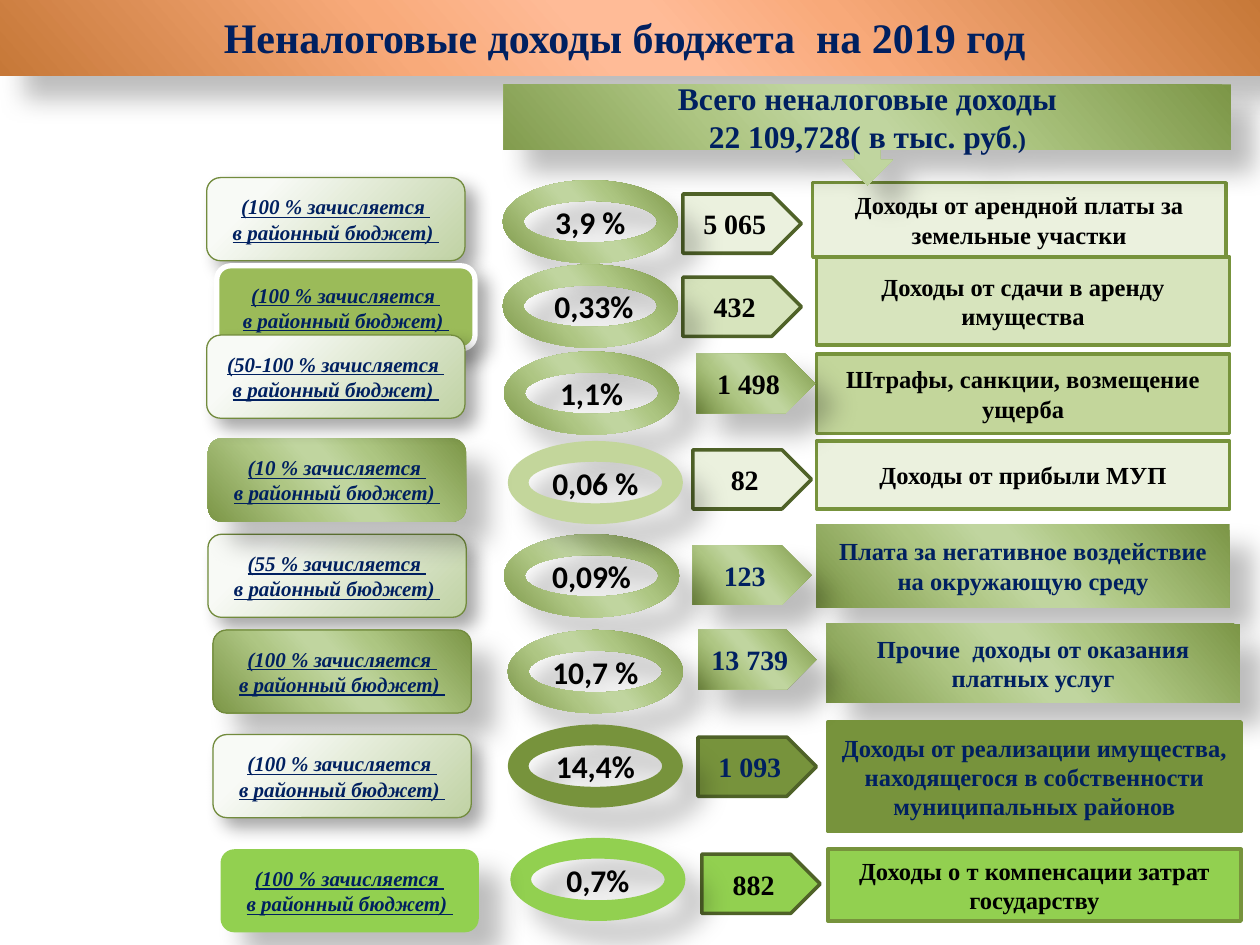
from lxml import etree
from pptx import Presentation
from pptx.dml.color import RGBColor
from pptx.enum.shapes import MSO_SHAPE
from pptx.enum.text import MSO_ANCHOR, PP_ALIGN
from pptx.oxml.ns import qn
from pptx.util import Inches, Pt

RECT, ROUNDED = MSO_SHAPE.RECTANGLE, MSO_SHAPE.ROUNDED_RECTANGLE
PLATE, DONUT = MSO_SHAPE.PENTAGON, MSO_SHAPE.DONUT
CALLOUT = MSO_SHAPE.DOWN_ARROW_CALLOUT
MIDDLE, CENTER = MSO_ANCHOR.MIDDLE, PP_ALIGN.CENTER

SERIF, SANS = "Times New Roman", "Calibri"
NAVY, BLACK = "002060", "000000"
PALE, LIGHT, SOFT, OLIVE, LIME = "EBF1DE", "D7E4BD", "C3D69B", "77933C", "92D050"
PLATE_EDGE, BADGE_EDGE = "4F6228", "728B3D"

# Gradients are lists of (position in percent, colour)
ORANGE = [(0, "C67838"), (33, "F8A979"), (47, "FFBB97"),
          (53, "FFBB97"), (68, "F8AA7A"), (100, "C67838")]
GREEN = [(0, "7C9647"), (33, "ADC682"), (47, "C0D59F"),
         (53, "C0D59F"), (68, "AEC683"), (100, "7C9647")]
MIST = [(20, "F8FAF6"), (100, "C0D2A4")]

# Shadows are (opacity in percent, blur, distance)
DEEP, NEAR = (26, 15, 18), (35, 10.2, 8)


def paint(sp, fill, line=None, width=2, shadow=None):
    if isinstance(fill, str):
        sp.fill.solid()
        sp.fill.fore_color.rgb = RGBColor.from_string(fill)
    else:
        sp.fill.gradient()
        grad = sp._element.spPr.find(qn("a:gradFill"))
        for child in list(grad):
            grad.remove(child)
        stops = etree.SubElement(grad, qn("a:gsLst"))
        for pos, color in fill:
            stop = etree.SubElement(stops, qn("a:gs"), pos=str(pos * 1000))
            etree.SubElement(stop, qn("a:srgbClr"), val=color)
        if fill is MIST:
            radial = etree.SubElement(grad, qn("a:path"), path="circle")
            etree.SubElement(radial, qn("a:fillToRect"), l="-15000", t="-15000",
                             r="115000", b="115000")
        else:
            etree.SubElement(grad, qn("a:lin"), ang=str(139 * 60000), scaled="0")
    if line:
        sp.line.color.rgb = RGBColor.from_string(line)
        sp.line.width = Pt(width)
    else:
        sp.line.fill.background()
    sp.shadow.inherit = False
    if shadow:
        alpha, blur, dist = shadow
        effects = sp._element.spPr.find(qn("a:effectLst"))
        outer = etree.SubElement(effects, qn("a:outerShdw"), blurRad=str(Pt(blur)),
                                 dist=str(Pt(dist)), dir=str(45 * 60000),
                                 algn="tl", rotWithShape="0")
        color = etree.SubElement(outer, qn("a:srgbClr"), val=BLACK)
        etree.SubElement(color, qn("a:alpha"), val=str(alpha * 1000))


def write(sp, text, size, color=BLACK, font=SERIF, emphasis=False, margin=0.1):
    tf = sp.text_frame
    tf.word_wrap = True
    tf.vertical_anchor = MIDDLE
    tf.margin_left = tf.margin_right = Inches(margin)
    tf.text = text
    for p in tf.paragraphs:
        p.alignment = CENTER
        for r in p.runs:
            r.font.name, r.font.size, r.font.bold = font, Pt(size), True
            r.font.color.rgb = RGBColor.from_string(color)
            if emphasis:
                r.font.italic = r.font.underline = True


prs = Presentation()
prs.slide_width, prs.slide_height = Inches(10), Inches(7.5)
s = prs.slides.add_slide(prs.slide_layouts[5])

# Title band
title = s.shapes.title
title.left, title.top = Inches(0), Inches(-0.02)
title.width, title.height = Inches(10), Inches(0.62)
paint(title, ORANGE, shadow=DEEP)
write(title, "Неналоговые доходы бюджета  на 2019 год ", 24, NAVY)

# Income sources: left, top, height, fill, text colour, text
sources = [
    (6.45, 1.45, 0.59, PALE, BLACK, "Доходы от арендной платы за земельные участки"),
    (6.48, 2.04, 0.7, LIGHT, BLACK, "Доходы от сдачи в аренду имущества"),
    (6.48, 2.81, 0.63, SOFT, BLACK, "Штрафы, санкции, возмещение ущерба"),
    (6.48, 3.5, 0.54, PALE, BLACK, "Доходы от прибыли МУП"),
    (6.48, 4.16, 0.66, GREEN, NAVY,
     "Плата за негативное воздействие на окружающую среду"),
    (6.56, 4.95, 0.63, GREEN, NAVY, "Прочие  доходы от оказания платных услуг"),
    (6.57, 5.73, 0.87, OLIVE, NAVY,
     "Доходы от реализации имущества, находящегося в собственности "
     "муниципальных районов"),
    (6.57, 6.74, 0.57, LIME, BLACK, "Доходы о т компенсации затрат государству"),
]
for left, top, height, fill, color, text in sources:
    sp = s.shapes.add_shape(RECT, Inches(left), Inches(top), Inches(3.28), Inches(height))
    if fill is GREEN:
        paint(sp, fill, shadow=DEEP)
    else:
        paint(sp, fill, OLIVE)
    write(sp, text, 14, color)

# Total callout
total = s.shapes.add_shape(CALLOUT, Inches(4), Inches(0.67), Inches(5.77), Inches(0.8))
paint(total, GREEN, shadow=DEEP)
write(total, "Всего неналоговые доходы\n22 109,728( в тыс. руб", 18, NAVY)
r = total.text_frame.paragraphs[1].add_run()
r.text = ".)"
r.font.name, r.font.size, r.font.bold = SERIF, Pt(14), True
r.font.color.rgb = RGBColor.from_string(NAVY)

# Amounts: left, top, fill, text colour, text
amounts = [
    (5.42, 1.54, PALE, BLACK, "5 065"),
    (5.42, 2.2, LIGHT, BLACK, "432"),
    (5.53, 2.81, GREEN, BLACK, "1 498"),
    (5.5, 4.33, GREEN, NAVY, "123"),
    (5.54, 5, GREEN, NAVY, "13 739"),
    (5.54, 5.85, OLIVE, NAVY, "1 093"),
    (5.57, 6.78, LIME, BLACK, "882"),
    (5.5, 3.57, PALE, BLACK, "82"),
]
for left, top, fill, color, text in amounts:
    sp = s.shapes.add_shape(PLATE, Inches(left), Inches(top), Inches(0.94), Inches(0.47))
    if fill is GREEN:
        paint(sp, fill, shadow=DEEP)
    else:
        paint(sp, fill, PLATE_EDGE)
    write(sp, text, 16, color, margin=0.05)

# Shares: left, top, fill, text
shares = [
    (3.99, 1.43, GREEN, "3,9 %"),
    (3.99, 2.1, GREEN, " 0,33%"),
    (4, 2.79, GREEN, "1,1%"),
    (4, 4.24, GREEN, "0,09%"),
    (4.03, 5, GREEN, "10,7 %"),
    (4.03, 5.75, OLIVE, "14,4%"),
    (4.05, 6.65, LIME, "0,7%"),
    (4.03, 3.5, SOFT, "0,06 %"),
]
for left, top, fill, text in shares:
    sp = s.shapes.add_shape(DONUT, Inches(left), Inches(top), Inches(1.39), Inches(0.66))
    paint(sp, fill, shadow=DEEP)
    write(sp, text, 18, font=SANS, margin=0.05)

# Shares credited to the district: left, top, fill, line, line width, shadow, percent
badges = [
    (1.64, 1.41, MIST, BADGE_EDGE, 0.75, NEAR, "100"),
    (1.72, 2.11, "9BBB59", "FFFFFF", 3, NEAR, "100"),
    (1.65, 4.24, MIST, BADGE_EDGE, 0.75, NEAR, "55"),
    (1.69, 5, GREEN, BADGE_EDGE, 0.75, DEEP, "100"),
    (1.69, 5.83, MIST, BADGE_EDGE, 0.75, NEAR, "100"),
    (1.75, 6.74, LIME, None, 0, DEEP, "100"),
    (1.65, 3.48, GREEN, None, 0, DEEP, "10"),
    (1.64, 2.66, MIST, BADGE_EDGE, 0.75, NEAR, "50-100"),
]
for left, top, fill, line, width, shadow, percent in badges:
    sp = s.shapes.add_shape(ROUNDED, Inches(left), Inches(top), Inches(2.05), Inches(0.66))
    paint(sp, fill, line, width, shadow)
    write(sp, f"({percent} % зачисляется \nв районный бюджет) ", 12, NAVY, emphasis=True)

prs.save("out.pptx")
